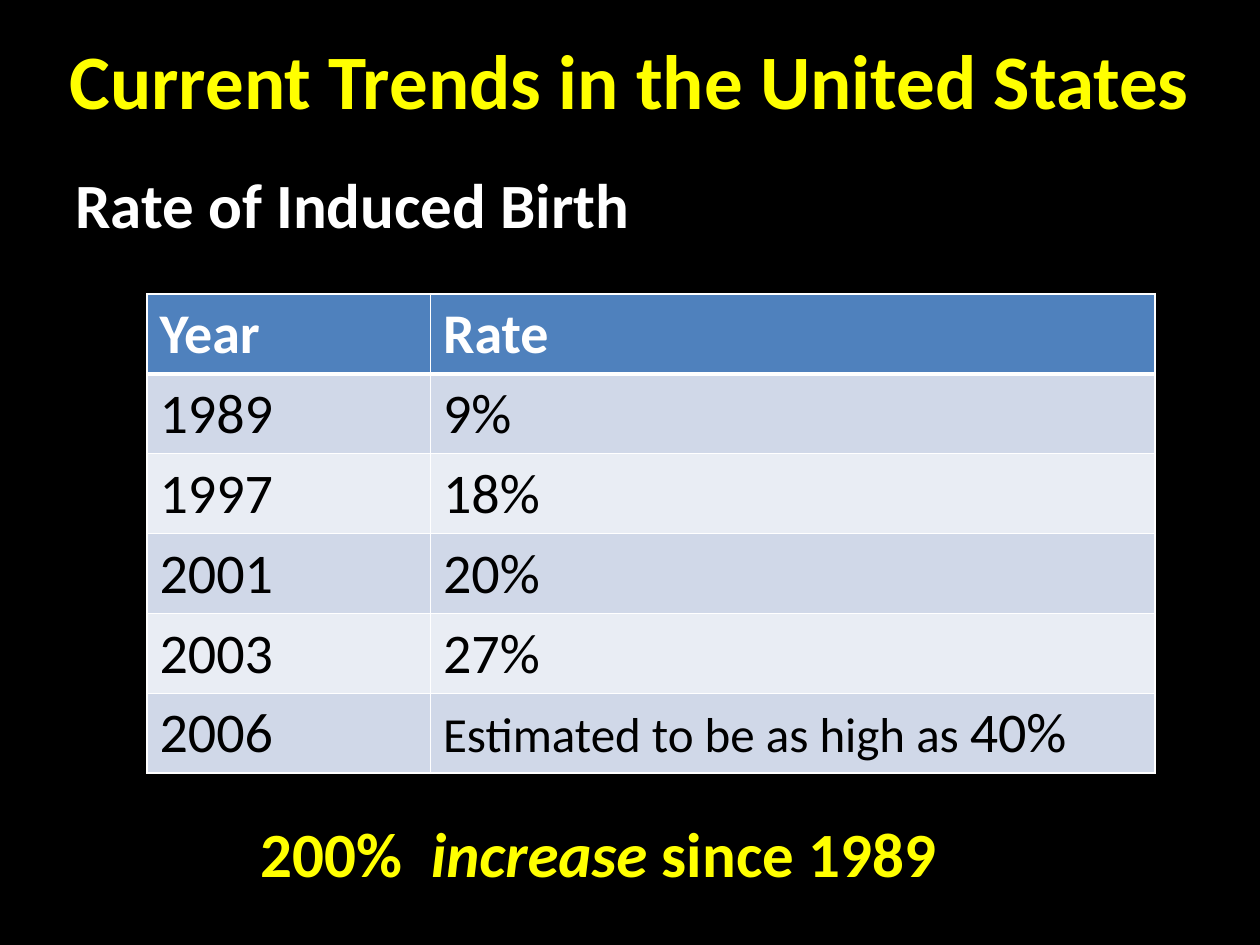
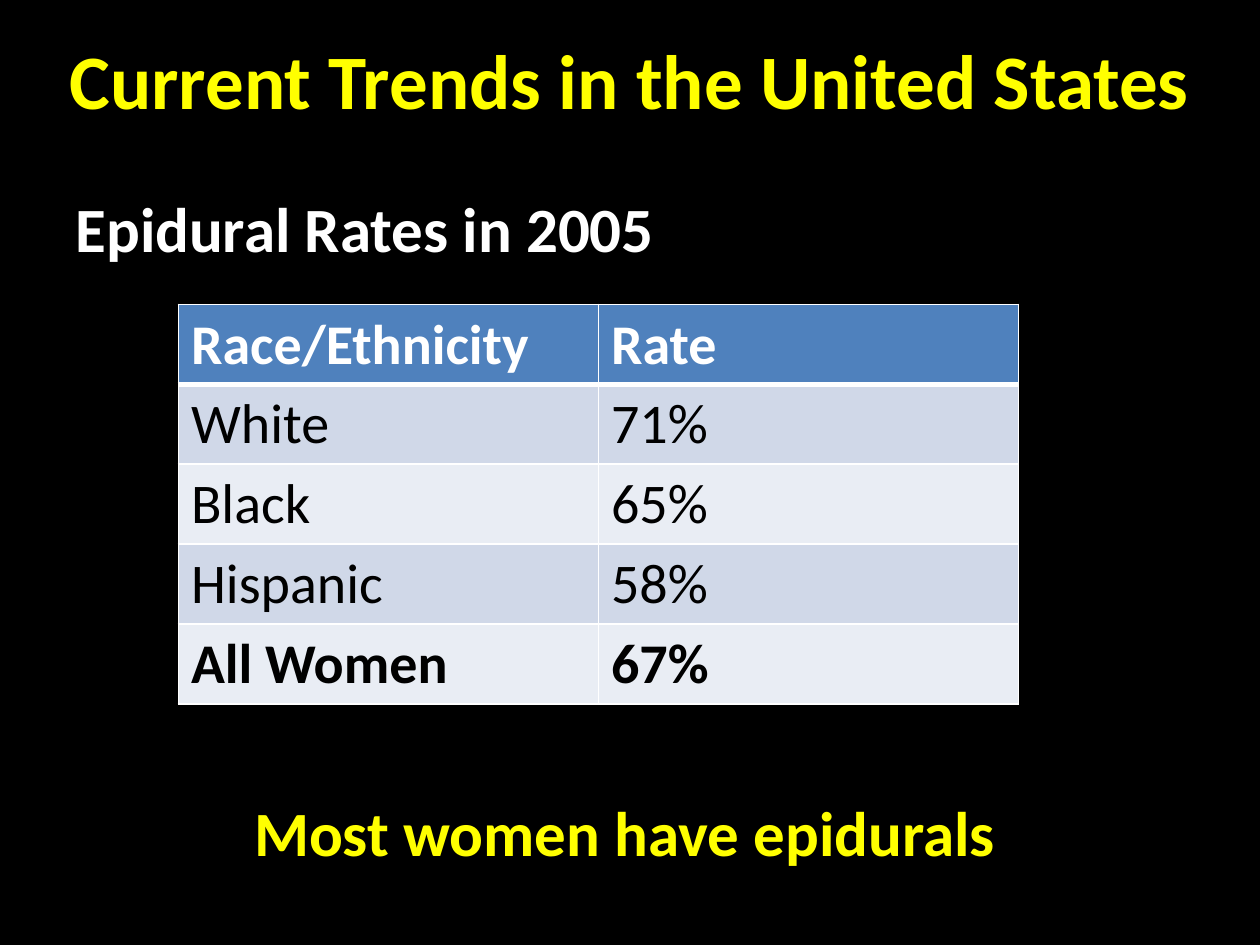
"""Build two slides on current birth trends in the United States."""
from dataclasses import dataclass
from lxml import etree
from pptx import Presentation
from pptx.dml.color import RGBColor
from pptx.enum.text import MSO_ANCHOR, PP_ALIGN
from pptx.oxml.ns import qn
from pptx.util import Pt

LEFT, MID = PP_ALIGN.LEFT, PP_ALIGN.CENTER
TOP, CENTRE = MSO_ANCHOR.TOP, MSO_ANCHOR.MIDDLE
BLANK = 6


@dataclass(frozen=True)
class Theme:
    font: str = "Calibri"
    back: str = "000000"
    white: str = "FFFFFF"
    black: str = "000000"
    accent: str = "FFFF00"
    header: str = "4F81BD"
    bands: tuple = ("D0D8E8", "E9EDF4")
    title: int = 44
    large: int = 36
    body: int = 32
    small: int = 28
    rule: int = 1
    thick: int = 3


class Deck:
    def __init__(self, theme):
        self.theme = theme
        self.prs = Presentation()
        self.prs.slide_width, self.prs.slide_height = Pt(720), Pt(540)

    def start(self):
        self.slide = self.prs.slides.add_slide(self.prs.slide_layouts[BLANK])
        fill = self.slide.background.fill
        fill.solid()
        fill.fore_color.rgb = RGBColor.from_string(self.theme.back)

    def letter(self, para, runs, size, color, bold=True):
        for text, extra in runs:
            run = para.add_run()
            run.text = text
            style = {"name": self.theme.font, "size": Pt(size), "bold": bold, **extra}
            for key, value in style.items():
                setattr(run.font, key, value)
            run.font.color.rgb = RGBColor.from_string(color)

    def text(self, box, runs, size, color, align=MID, frame=None, para=None):
        body = self.slide.shapes.add_textbox(*map(Pt, box)).text_frame
        first = body.paragraphs[0]
        formats = (
            (body, {"word_wrap": True, "vertical_anchor": TOP, **(frame or {})}),
            (first, {"alignment": align, **(para or {})}),
        )
        for item, style in formats:
            for key, value in style.items():
                setattr(item, key, value)
        self.letter(first, runs, size, color)

    def title(self, text):
        self.text((0, 0, 720, 90), [(text, {})], self.theme.title,
                  self.theme.accent, frame={"vertical_anchor": CENTRE})

    def heading(self, text, top):
        self.text((0, top, 720, 47), [(text, {})], self.theme.large,
                  self.theme.white, LEFT, {"margin_left": Pt(43.2)},
                  {"line_spacing": 0.9, "space_after": Pt(20)})

    def note(self, box, runs):
        self.text(box, runs, self.theme.large, self.theme.accent)

    def border(self, cell, widths):
        props = cell._tc.get_or_add_tcPr()
        for spot, (side, width) in enumerate(widths.items()):
            line = etree.Element(qn(f"a:ln{side}"), w=str(Pt(width)))
            fill = etree.SubElement(line, qn("a:solidFill"))
            etree.SubElement(fill, qn("a:srgbClr"), val=self.theme.white)
            props.insert(spot, line)

    def table(self, box, cols, rows, total=False):
        look = self.theme
        grid = self.slide.shapes.add_table(len(rows), len(cols), *map(Pt, box)).table
        for col, width in zip(grid.columns, cols):
            col.width = Pt(width)
        for r, row in enumerate(rows):
            head = r == 0
            bold = head or (total and r == len(rows) - 1)
            back = look.header if head else look.bands[(r - 1) % 2]
            widths = {"L": look.rule, "R": look.rule,
                      "T": look.thick if r == 1 else look.rule,
                      "B": look.thick if head else look.rule}
            for c, value in enumerate(row):
                cell = grid.cell(r, c)
                cell.fill.solid()
                cell.fill.fore_color.rgb = RGBColor.from_string(back)
                self.border(cell, widths)
                runs = [(value, {})] if isinstance(value, str) else value
                self.letter(cell.text_frame.paragraphs[0], runs, look.body,
                            look.white if head else look.black, bold)


def main():
    theme = Theme()
    deck = Deck(theme)
    title = "Current Trends in the United States"

    deck.start()
    deck.title(title)
    deck.heading("Rate of Induced Birth", 96)
    guess = [("Estimated to be as high as ", {"size": Pt(theme.small)}), ("40%", {})]
    deck.table((84, 168, 576, 273.6), (162, 414), [
        ("Year", "Rate"), ("1989", "9%"), ("1997", "18%"),
        ("2001", "20%"), ("2003", "27%"), ("2006", guess)])
    deck.note((90, 462, 504, 51), [
        ("200%  ", {}), ("increase", {"italic": True}), (" since 1989", {})])

    deck.start()
    deck.title(title)
    deck.heading("Epidural Rates in 2005", 109.5)
    deck.table((102, 174, 480, 228), (240, 240), [
        ("Race/Ethnicity", "Rate"), ("White", "71%"), ("Black", "65%"),
        ("Hispanic", "58%"), ("All Women", "67%")], total=True)
    deck.note((18, 450, 678, 51), [("Most women have epidurals", {})])

    deck.prs.save("out.pptx")


if __name__ == "__main__":
    main()
